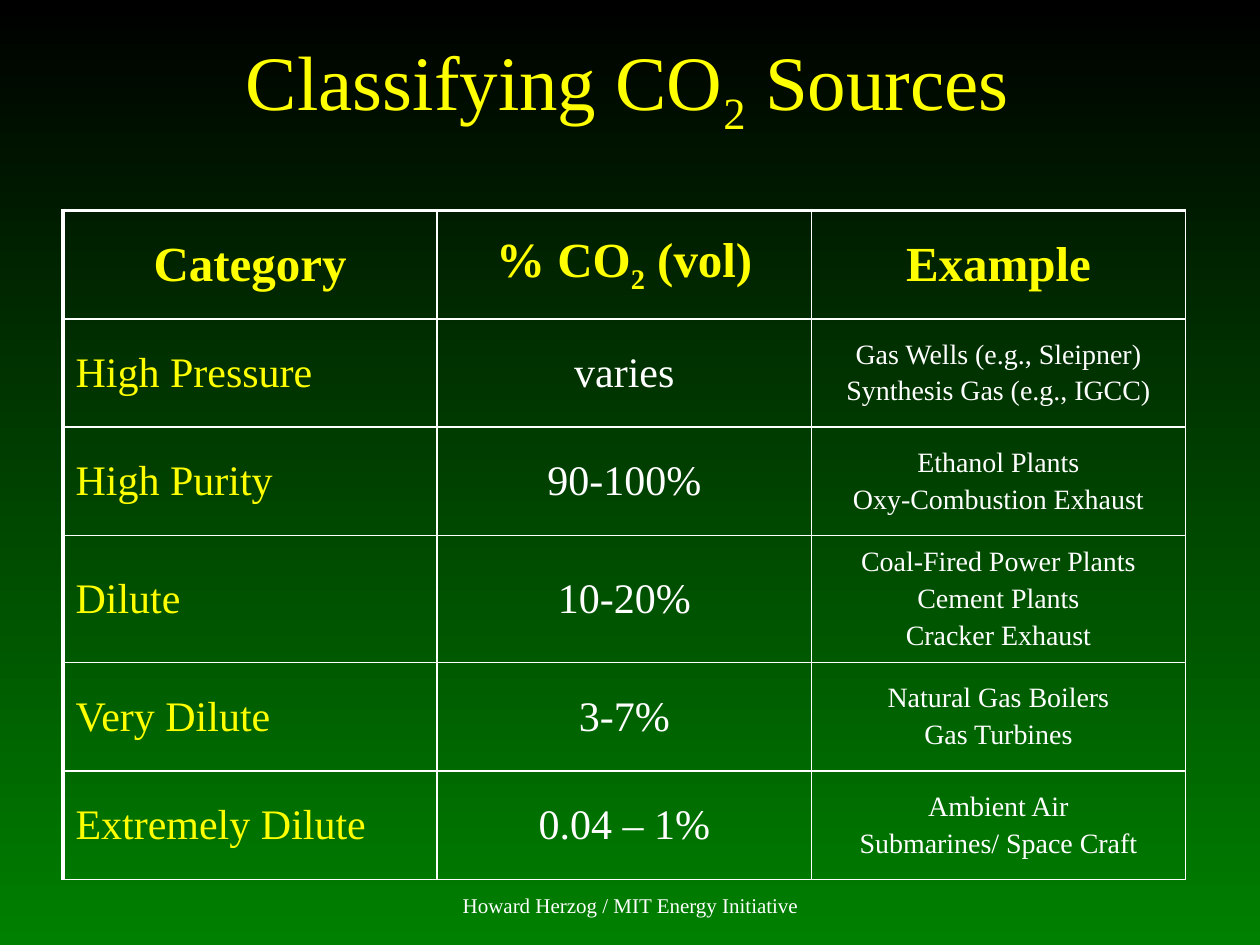
from pptx import Presentation
from pptx.dml.color import RGBColor
from pptx.enum.text import MSO_ANCHOR, PP_ALIGN
from pptx.oxml import parse_xml
from pptx.oxml.ns import nsdecls
from pptx.util import Inches, Pt

LEFT, CENTER = PP_ALIGN.LEFT, PP_ALIGN.CENTER
MIDDLE, BOTTOM = MSO_ANCHOR.MIDDLE, MSO_ANCHOR.BOTTOM

COLORS = {"top": "000000", "bottom": "008000", "heading": "FFFF00", "body": "FFFFFF"}
FONT = "Times New Roman"
SUBSCRIPT = "2"

HEADER = ["Category", "% CO|2| (vol)", "Example"]
SOURCES = [
    ["High Pressure", "varies", "Gas Wells (e.g., Sleipner)\nSynthesis Gas (e.g., IGCC)"],
    ["High Purity", "90-100%", "Ethanol Plants\nOxy-Combustion Exhaust"],
    ["Dilute", "10-20%", "Coal-Fired Power Plants\nCement Plants\nCracker Exhaust"],
    ["Very Dilute", "3-7%", "Natural Gas Boilers\nGas Turbines"],
    ["Extremely Dilute", "0.04 – 1%", "Ambient Air\nSubmarines/ Space Craft"],
]
ROW_HEIGHTS = [0.86, 0.86, 0.86, 1.01, 0.86, 0.86]
COLUMN_WIDTH = 2.97

HEADER_STYLE = {"size": 28, "color": "heading", "bold": True}
COLUMN_STYLES = [
    {"size": 24, "color": "heading", "align": LEFT},
    {"size": 24, "color": "body"},
    {"size": 16, "color": "body"},
]


def rgb(name):
    """Return the named colour."""
    return RGBColor.from_string(COLORS[name])


def write_text(tf, text, size, color, bold=False, align=CENTER):
    """Write one paragraph per line, with subscripts between bars."""
    font_format = {"name": FONT, "size": Pt(size), "bold": bold}
    for i, line in enumerate(text.split("\n")):
        p = tf.add_paragraph() if i else tf.paragraphs[0]
        p.alignment = align
        if i:
            p.space_before = Pt(0.2 * size)
        for part in line.split("|"):
            r = p.add_run()
            r.text = part
            for key, value in font_format.items():
                setattr(r.font, key, value)
            r.font.color.rgb = rgb(color)
            if part == SUBSCRIPT:
                r._r.get_or_add_rPr().set("baseline", "-25000")


def add_text(s, box, text, size, color, anchor, wrap=True):
    """Add a text box."""
    tf = s.shapes.add_textbox(*map(Inches, box)).text_frame
    tf.word_wrap = wrap
    tf.vertical_anchor = anchor
    write_text(tf, text, size, color)


def set_borders(cell, widths):
    """Draw the four cell borders with widths in points."""
    tc_pr = cell._tc.get_or_add_tcPr()
    for side, width in widths.items():
        tc_pr.append(parse_xml(
            f'<a:ln{side} {nsdecls("a")} w="{Pt(width)}"><a:solidFill>'
            f'<a:srgbClr val="{COLORS["body"]}"/></a:solidFill></a:ln{side}>'))


def add_sources_table(s):
    """Add the table of source categories."""
    rows = [HEADER] + SOURCES
    box = (0.5, 1.67, COLUMN_WIDTH * len(HEADER), sum(ROW_HEIGHTS))
    table = s.shapes.add_table(len(rows), len(HEADER), *map(Inches, box)).table
    table.first_row = table.horz_banding = False
    for column in table.columns:
        column.width = Inches(COLUMN_WIDTH)
    for i, (texts, height) in enumerate(zip(rows, ROW_HEIGHTS)):
        table.rows[i].height = Inches(height)
        for j, text in enumerate(texts):
            cell = table.cell(i, j)
            cell.vertical_anchor = MIDDLE
            set_borders(cell, {"L": 1 if j else 2.25, "R": 1,
                               "T": 1 if i else 2.25, "B": 1})
            cell.fill.background()
            write_text(cell.text_frame, text, **(COLUMN_STYLES[j] if i else HEADER_STYLE))


def set_background(s):
    """Fill the slide with a gradient from top to bottom."""
    fill = s.background.fill
    fill.gradient()
    fill.gradient_angle = 270
    for stop, position, color in zip(fill.gradient_stops, (0, 1), ("top", "bottom")):
        stop.position = position
        stop.color.rgb = rgb(color)


def main():
    """Build and save the slide."""
    prs = Presentation()
    prs.slide_width, prs.slide_height = Inches(10), Inches(7.5)
    s = prs.slides.add_slide(prs.slide_layouts[6])
    set_background(s)
    add_text(s, (3.42, 6.83, 3.17, 0.5), "Howard Herzog / MIT Energy Initiative",
             12, "body", BOTTOM, wrap=False)
    add_text(s, (0.74, 0.19, 8.48, 0.98), "Classifying CO|2| Sources", 44, "heading", MIDDLE)
    add_sources_table(s)
    prs.save("out.pptx")


if __name__ == "__main__":
    main()
